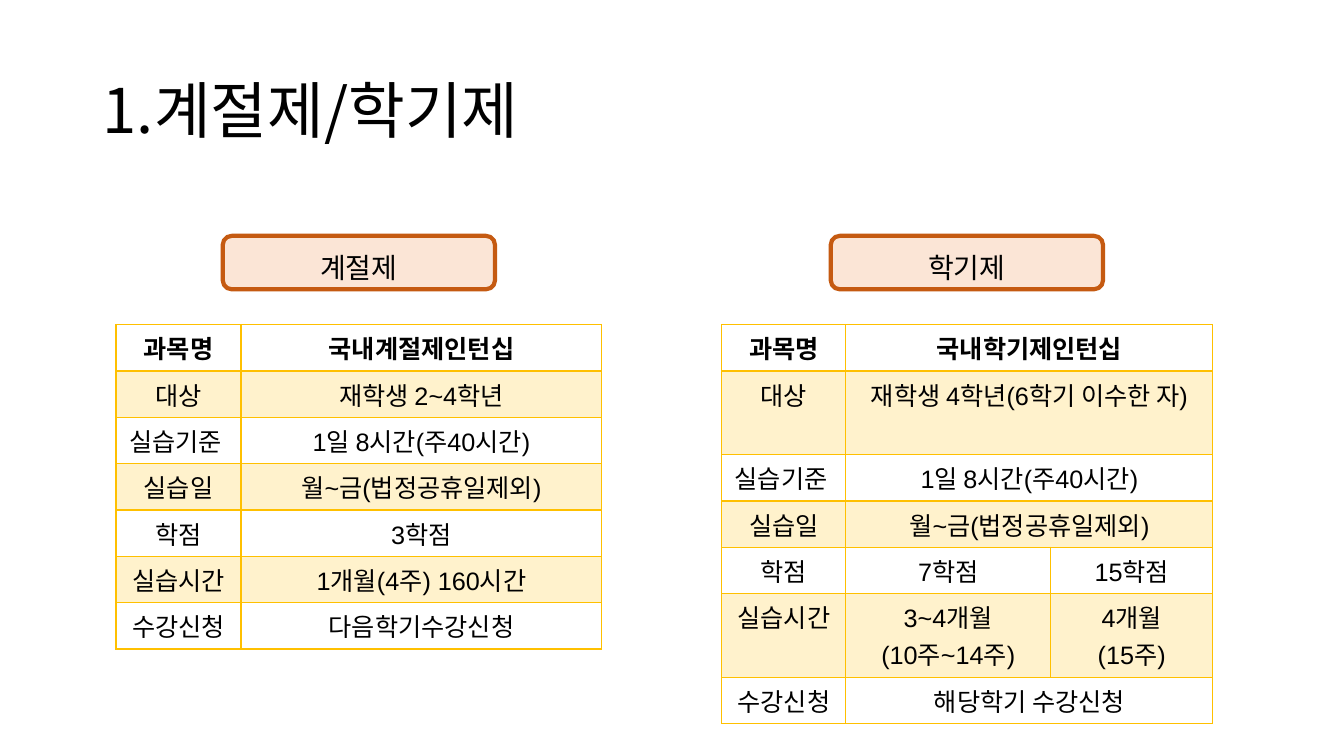
from lxml.etree import SubElement
from pptx import Presentation
from pptx.dml.color import RGBColor
from pptx.enum.shapes import MSO_SHAPE as Shape
from pptx.enum.text import MSO_ANCHOR as Anchor, PP_ALIGN as Align
from pptx.oxml.ns import qn
from pptx.util import Inches, Pt

BLACK = RGBColor(0x00, 0x00, 0x00)
PEACH = RGBColor(0xFB, 0xE5, 0xD6)
RUST = RGBColor(0xC5, 0x5A, 0x11)
GOLD = RGBColor(0xFF, 0xC0, 0x00)
HANGUL = "Noto Sans CJK KR"
LATIN = "Arial"
ONE_LINE, TWO_LINES = 0.46, 0.83

SEASON_ROWS = [
    ["과목명", "국내계절제인턴십"],
    ["대상", "재학생 2~4학년"],
    ["실습기준 ", "1일 8시간(주40시간)"],
    ["실습일", "월~금(법정공휴일제외)"],
    ["학점", "3학점"],
    ["실습시간", "1개월(4주) 160시간"],
    ["수강신청", "다음학기수강신청"],
]
SEMESTER_ROWS = [
    ["과목명", "국내학기제인턴십"],
    ["대상", "재학생 4학년(6학기 이수한 자)"],
    ["실습기준 ", "1일 8시간(주40시간)"],
    ["실습일", "월~금(법정공휴일제외)"],
    ["학점", "7학점", "15학점"],
    ["실습시간", "3~4개월\n(10주~14주)", "4개월\n(15주)"],
    ["수강신청", "해당학기 수강신청"],
]
SEASON_HEIGHTS = [ONE_LINE] * 7
SEMESTER_HEIGHTS = [ONE_LINE, TWO_LINES] + [ONE_LINE] * 3 + [TWO_LINES, ONE_LINE]


def write(frame, text, size, font=HANGUL, bold=False, align=Align.CENTER, spacing=None):
    """Fill a text frame with one formatted paragraph per line of text."""
    frame.word_wrap = True
    for number, line in enumerate(text.split("\n")):
        paragraph = frame.add_paragraph() if number else frame.paragraphs[0]
        paragraph.alignment = align
        paragraph.line_spacing = spacing
        run = paragraph.add_run()
        run.text = line
        run.font.size = Pt(size)
        run.font.bold = bold
        run.font.name = font
        run.font.color.rgb = BLACK
        SubElement(run.font._element, qn("a:ea"), typeface=HANGUL)


def add_title(slide, text, left, top, width, height):
    """Place the slide title in its box."""
    frame = slide.shapes.add_textbox(*map(Inches, (left, top, width, height))).text_frame
    frame.vertical_anchor = Anchor.MIDDLE
    write(frame, text, 44, align=Align.LEFT, spacing=0.9)


def add_heading(slide, text, left, top, width, height):
    """Place a rounded heading above a programme table."""
    pill = slide.shapes.add_shape(Shape.ROUNDED_RECTANGLE, *map(Inches, (left, top, width, height)))
    pill.shadow.inherit = False
    pill.fill.solid()
    pill.fill.fore_color.rgb = PEACH
    pill.line.color.rgb = RUST
    pill.line.width = Pt(3)
    frame = pill.text_frame
    frame.vertical_anchor = Anchor.MIDDLE
    frame.margin_top, frame.margin_bottom = Inches(0.15), Inches(0.01)
    write(frame, text, 20, spacing=0.9)


def style_cell(cell, row):
    """Draw gold borders and tint every second row."""
    properties = cell._tc.get_or_add_tcPr()
    widths = {"lnL": 1, "lnR": 1, "lnT": 2 if row == 1 else 1, "lnB": 2 if row == 0 else 1}
    for side, width in widths.items():
        border = SubElement(properties, qn(f"a:{side}"), w=str(Pt(width)))
        SubElement(SubElement(border, qn("a:solidFill")), qn("a:srgbClr"), val=str(GOLD))
    if row % 2:
        cell.fill.solid()
        cell.fill.fore_color.rgb = GOLD
        color = properties.find(qn("a:solidFill")).find(qn("a:srgbClr"))
        SubElement(color, qn("a:alpha"), val="20000")
    else:
        cell.fill.background()


def add_programme_table(slide, rows, left, top, columns, heights):
    """Place a table whose short rows stretch their last entry to the right edge."""
    box = map(Inches, (left, top, sum(columns), sum(heights)))
    table = slide.shapes.add_table(len(rows), len(columns), *box).table
    table.first_row = table.horz_banding = False
    for column, width in zip(table.columns, columns):
        column.width = Inches(width)
    for row, (entries, height) in enumerate(zip(rows, heights)):
        table.rows[row].height = Inches(height)
        for column in range(len(columns)):
            style_cell(table.cell(row, column), row)
        if len(entries) < len(columns):
            table.cell(row, len(entries) - 1).merge(table.cell(row, len(columns) - 1))
        for column, entry in enumerate(entries):
            write(table.cell(row, column).text_frame, entry, 18, LATIN, bold=row == 0)


def main():
    """Build and save the slide."""
    deck = Presentation()
    deck.slide_width, deck.slide_height = Inches(13.33), Inches(7.5)
    slide = deck.slides.add_slide(deck.slide_layouts[6])
    add_title(slide, "1.계절제/학기제", 0.92, 0.4, 11.5, 1.45)
    for name, left in (("계절제", 2.21), ("학기제", 8.24)):
        add_heading(slide, name, left, 2.34, 2.7, 0.53)
    add_programme_table(slide, SEASON_ROWS, 1.15, 3.22, [1.24, 3.58], SEASON_HEIGHTS)
    add_programme_table(slide, SEMESTER_ROWS, 7.16, 3.22, [1.23, 2.03, 1.61], SEMESTER_HEIGHTS)
    deck.save("out.pptx")


if __name__ == "__main__":
    main()
